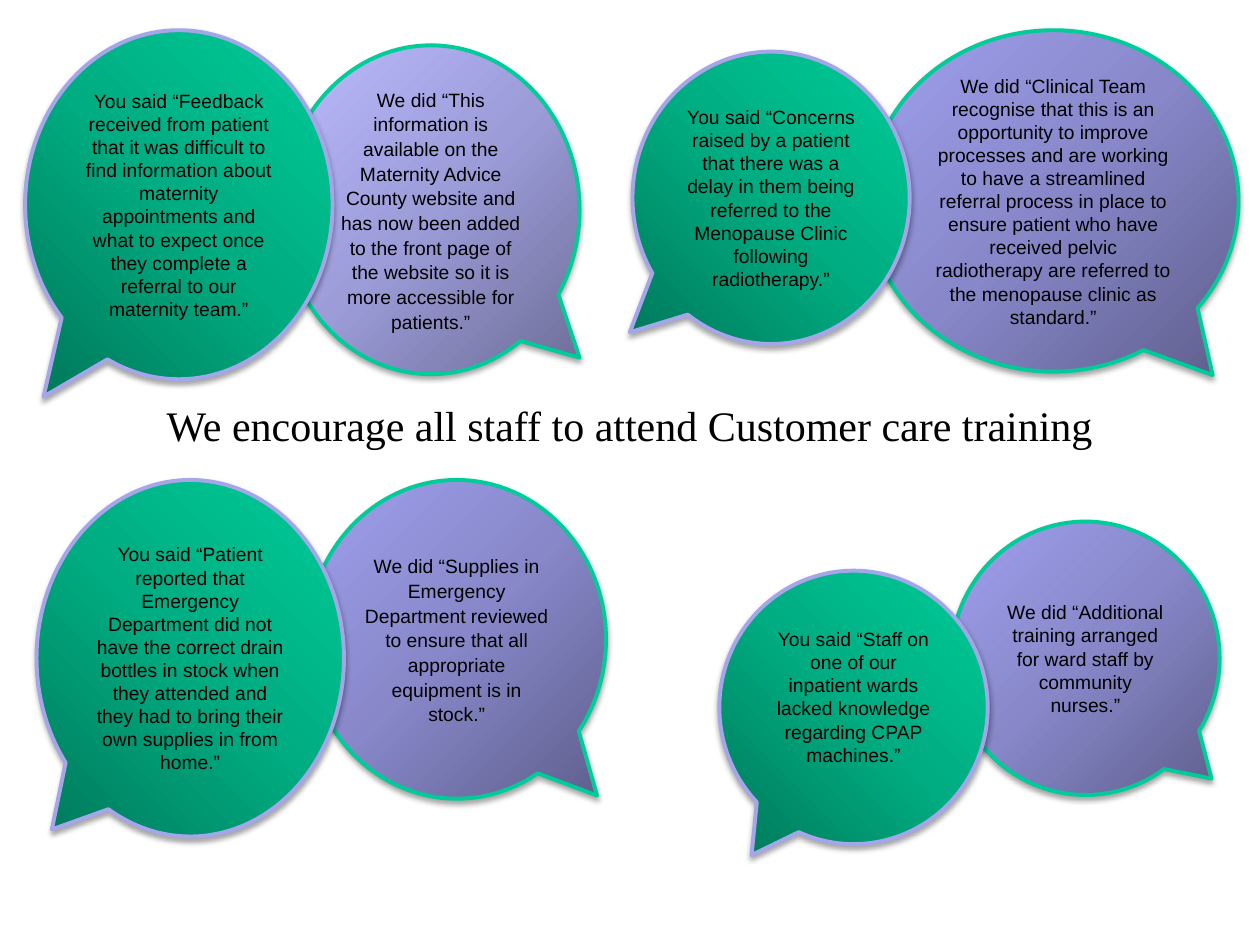
from lxml.etree import SubElement
from pptx import Presentation
from pptx.dml.color import RGBColor
from pptx.enum.shapes import MSO_SHAPE
from pptx.enum.text import MSO_ANCHOR, MSO_AUTO_SIZE, PP_ALIGN
from pptx.oxml.ns import qn
from pptx.util import Inches, Pt

COLS, ROWS = 100, 75
CELL = Inches(0.1)

HUES = {
    "text": "000000",
    "teal": "00CC99",
    "lilac": "A5A5E9",
}
SAID = {"stops": ("00795B", "00AC81", "00CC99"), "line": "lilac", "focus": "l"}
DID = {"stops": ("5F5F8D", "8787C9", "A0A0EE"), "line": "teal", "focus": "r"}
PALE = {**DID, "stops": ("6E6E98", "9C9CD9", "BBBBFF")}

# Style, box in grid cells (left, top, width, height), tip of the tail, wording, options
BUBBLES = [
    (PALE, (22.4, 3.6, 23.6, 26.1), (0.5, 0.45),
     "We did “This information is available on the Maternity Advice "
     "County website and has now been added to the front page of the website so it is "
     "more accessible for patients.”", {"lead": 1.07}),
    (SAID, (2, 2.4, 24.4, 27.7), (-0.44, 0.55),
     "You said “Feedback received from patient that it was difficult to find "
     "information about maternity appointments and what to expect once they "
     "complete a referral to our maternity team.”", {}),
    (DID, (68.9, 2.4, 29.4, 27.1), (0.43, 0.51),
     "We did “Clinical Team recognise that this is an opportunity to improve "
     "processes and are working to have a streamlined referral process in place "
     "to ensure patient who have received pelvic radiotherapy are referred to "
     "the menopause clinic as standard.”", {}),
    (SAID, (50.2, 4.1, 22, 23.2), (-0.51, 0.46),
     "You said “Concerns raised by a patient that there was a delay in them "
     "being referred to the Menopause Clinic following radiotherapy.”", {}),
    (DID, (24.4, 38.1, 23.7, 25.3), (0.47, 0.49),
     "We did “Supplies in Emergency Department reviewed to ensure that all "
     "appropriate equipment is in stock.”", {"lead": 1.07}),
    (SAID, (2.9, 38.1, 24.4, 28.3), (-0.45, 0.48),
     "You said “Patient reported that Emergency Department did not have the "
     "correct drain bottles in stock when they attended and they had to bring "
     "their own supplies in from home.”", {}),
    (DID, (75.5, 41.4, 21.3, 21.7), (0.47, 0.44),
     "We did “Additional training arranged for ward staff by community nurses.”",
     {}),
    (SAID, (57.1, 45.3, 21.3, 21.7), (-0.38, 0.54),
     "You said “Staff on one of our inpatient wards lacked knowledge regarding "
     "CPAP machines.”", {"foot": 0.22}),
]


def span(*cells):
    return [int(n * CELL) for n in cells]


def node(top, tag, **attrs):
    return SubElement(top, qn(f"a:{tag}"), {k: str(v) for k, v in attrs.items()})


def shade(shape, stops, focus):
    """Fill with a round gradient that starts in a lower corner."""
    grad = node(shape.element.spPr, "gradFill", rotWithShape=1)
    chain = node(grad, "gsLst")
    for pos, hue in zip((0, 50000, 100000), stops):
        node(node(chain, "gs", pos=pos), "srgbClr", val=hue)
    way = node(grad, "path", path="circle")
    side = "r" if focus == "l" else "l"
    node(way, "fillToRect", **{side: 100000, "t": 100000})


def drop(shape):
    """Add a soft shadow straight below the shape."""
    shape.shadow.inherit = False
    cast = node(shape.element.spPr.find(qn("a:effectLst")), "outerShdw",
                blurRad=Pt(3.1), dist=Pt(1.8), dir=90 * 60000, rotWithShape=0)
    node(node(cast, "srgbClr", val=HUES["text"]), "alpha", val=35000)


def write(frame, text, font, size):
    frame.word_wrap = True
    frame.vertical_anchor = MSO_ANCHOR.MIDDLE
    para = frame.paragraphs[0]
    para.text = text
    para.alignment = PP_ALIGN.CENTER
    para.font.name = font
    para.font.size = Pt(size)
    para.font.color.rgb = RGBColor.from_string(HUES["text"])
    return para


def bubble(slide, style, box, tip, text, lead=None, foot=0.05):
    shape = slide.shapes.add_shape(MSO_SHAPE.OVAL_CALLOUT, *span(*box))
    shape.adjustments[0], shape.adjustments[1] = tip
    shade(shape, style["stops"], style["focus"])
    shape.line.color.rgb = RGBColor.from_string(HUES[style["line"]])
    shape.line.width = Pt(2.25)
    drop(shape)
    para = write(shape.text_frame, text, "Arial", 11)
    para.line_spacing = lead
    shape.text_frame.margin_bottom = Inches(foot)


def title(slide, text):
    head = slide.shapes.title
    head.left, head.top, head.width, head.height = span(7.5, 31.2, 85, 5)
    head.text_frame.auto_size = MSO_AUTO_SIZE.NONE
    write(head.text_frame, text, "Times New Roman", 24)


def main():
    deck = Presentation()
    deck.slide_width, deck.slide_height = span(COLS, ROWS)
    slide = deck.slides.add_slide(deck.slide_layouts[5])
    title(slide, "We encourage all staff to attend Customer care training")
    for style, box, tip, text, extra in BUBBLES:
        bubble(slide, style, box, tip, text, **extra)
    deck.save("out.pptx")


if __name__ == "__main__":
    main()
